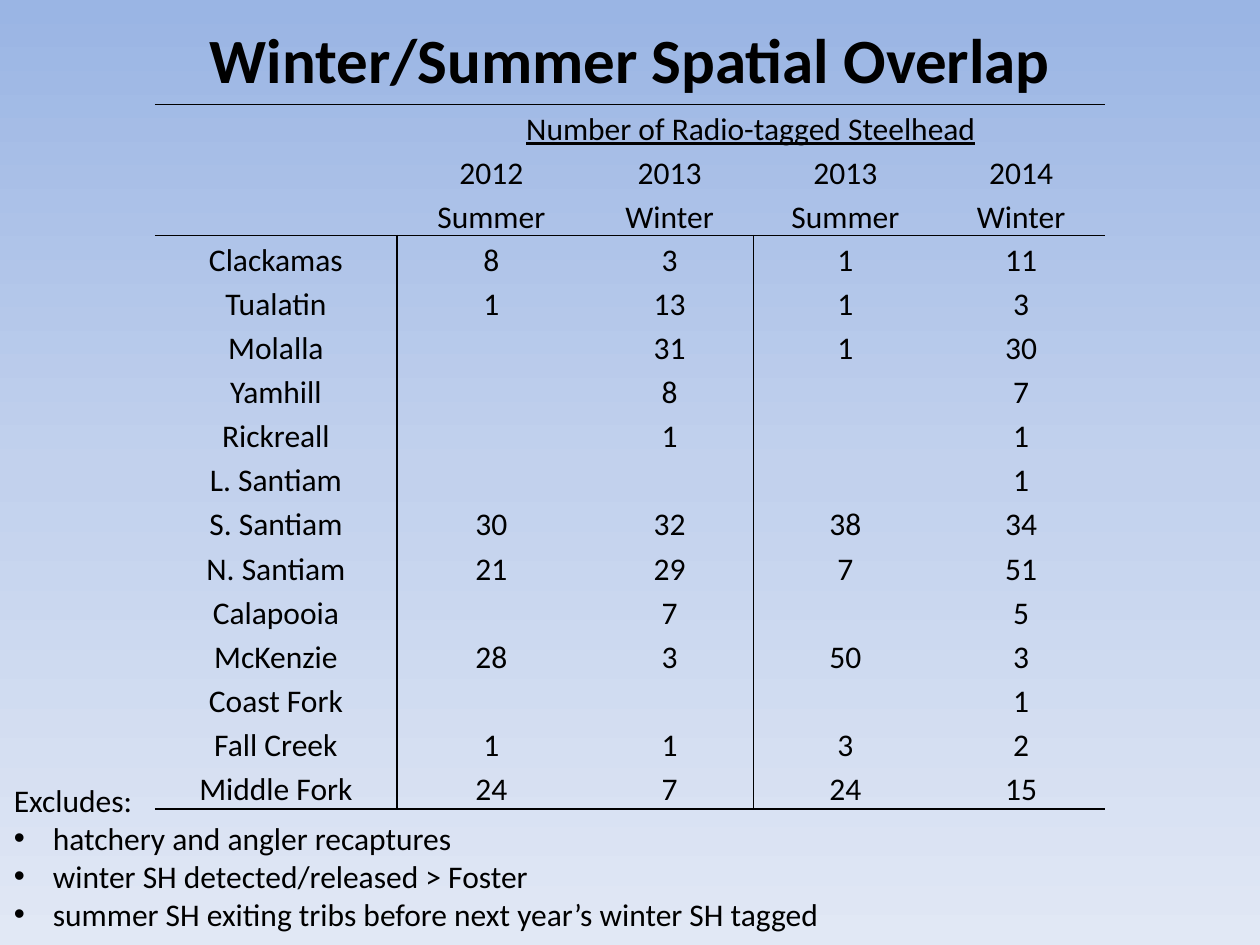
import copy
import dataclasses

import lxml.etree
import pptx
import pptx.dml.color
import pptx.enum.text
import pptx.oxml.ns
import pptx.util

Inches = pptx.util.Inches
Pt = pptx.util.Pt
qn = pptx.oxml.ns.qn
CENTER = pptx.enum.text.PP_ALIGN.CENTER
LEFT = pptx.enum.text.PP_ALIGN.LEFT
MIDDLE = pptx.enum.text.MSO_ANCHOR.MIDDLE
TOP = pptx.enum.text.MSO_ANCHOR.TOP
PLAIN_TABLE = "{2D5ABB26-0587-4C30-8999-92F81FD0307C}"


@dataclasses.dataclass(frozen=True)
class Theme:
    font: str = "Calibri"
    ink: str = "000000"
    sky: tuple = ((0, "9AB5E4"), (0.5, "C2D1ED"), (1, "E1E8F5"))
    title_size: int = 36
    text_size: int = 18
    rule_width: int = 1
    line_spacing: float = 1.15


HEADINGS = ["", "2012 Summer", "2013 Winter", "2013 Summer", "2014 Winter"]
COUNTS = [
    ("Clackamas", 8, 3, 1, 11),
    ("Tualatin", 1, 13, 1, 3),
    ("Molalla", "", 31, 1, 30),
    ("Yamhill", "", 8, "", 7),
    ("Rickreall", "", 1, "", 1),
    ("L. Santiam", "", "", "", 1),
    ("S. Santiam", 30, 32, 38, 34),
    ("N. Santiam", 21, 29, 7, 51),
    ("Calapooia", "", 7, "", 5),
    ("McKenzie", 28, 3, 50, 3),
    ("Coast Fork", "", "", "", 1),
    ("Fall Creek", 1, 1, 3, 2),
    ("Middle Fork", 24, 7, 24, 15),
]
EXCLUSIONS = [
    "hatchery and angler recaptures",
    "winter SH detected/released > Foster",
    "summer SH exiting tribs before next year’s winter SH tagged",
]


def apply(target, values):
    for name, value in values.items():
        setattr(target, name, value)


class SlideBuilder:
    def __init__(self, deck, theme):
        self.theme = theme
        self.page = deck.slides.add_slide(deck.slide_layouts[1])

    def background(self):
        fill = self.page.background.fill
        fill.gradient()
        fill.gradient_angle = 270
        stop_list = self.page.element.find(".//" + qn("a:gsLst"))
        stop_list.append(copy.deepcopy(stop_list[-1]))
        for stop, (position, color) in zip(stop_list, self.theme.sky):
            stop.set("pos", str(int(position * 100000)))
            for child in list(stop):
                stop.remove(child)
            lxml.etree.SubElement(stop, qn("a:srgbClr"), val=color)

    def place(self, box, left, top, width, height):
        apply(box, {"left": Inches(left), "top": Inches(top),
                    "width": Inches(width), "height": Inches(height)})

    def add_span(self, para, text, size=None, **values):
        span = para.add_run()
        span.text = text
        apply(span.font, {"name": self.theme.font,
                          "size": Pt(size or self.theme.text_size), **values})
        span.font.color.rgb = pptx.dml.color.RGBColor.from_string(self.theme.ink)

    def title(self, text, *bounds):
        box = self.page.shapes.title
        self.place(box, *bounds)
        box.text_frame.vertical_anchor = MIDDLE
        para = box.text_frame.paragraphs[0]
        para.alignment = CENTER
        self.add_span(para, text, self.theme.title_size, bold=True)

    def bullet_list(self, heading, items, *bounds):
        box = self.page.placeholders[1]
        self.place(box, *bounds)
        apply(box.text_frame, {
            "word_wrap": False, "vertical_anchor": TOP,
            "auto_size": pptx.enum.text.MSO_AUTO_SIZE.SHAPE_TO_FIT_TEXT})
        for index, text in enumerate([heading, *items]):
            para = box.text_frame.add_paragraph() if index else box.text_frame.paragraphs[0]
            apply(para, {"alignment": LEFT, "space_before": Pt(0)})
            indent = Inches(0.31) if index else 0
            properties = para._p.get_or_add_pPr()
            properties.set("marL", str(indent))
            properties.set("indent", str(-indent))
            if index:
                lxml.etree.SubElement(properties, qn("a:buFont"), typeface="Arial")
                lxml.etree.SubElement(properties, qn("a:buChar"), char="•")
            else:
                lxml.etree.SubElement(properties, qn("a:buNone"))
            self.add_span(para, text)

    def borders(self, cell, sides):
        properties = cell._tc.get_or_add_tcPr()
        for index, side in enumerate("LRTB"):
            line = lxml.etree.Element(qn("a:ln" + side), w=str(Pt(self.theme.rule_width)))
            if side in sides:
                fill = lxml.etree.SubElement(line, qn("a:solidFill"))
                lxml.etree.SubElement(fill, qn("a:srgbClr"), val=self.theme.ink)
            else:
                lxml.etree.SubElement(line, qn("a:noFill"))
            properties.insert(index, line)

    def table(self, rows, widths, row_height, left, top, ruled_above, ruled_right):
        frame = self.page.shapes.add_table(
            len(rows), len(widths), Inches(left), Inches(top),
            Inches(sum(widths)), Inches(row_height * len(rows)))
        grid = frame.table
        apply(grid, {"first_row": False, "horz_banding": False})
        grid._tbl.tblPr.find(qn("a:tableStyleId")).text = PLAIN_TABLE
        for column, width in zip(grid.columns, widths):
            column.width = Inches(width)
        for row in grid.rows:
            row.height = Inches(row_height)
        grid.cell(0, 1).merge(grid.cell(0, len(widths) - 1))
        for r, values in enumerate(rows):
            for c, value in enumerate(values):
                cell = grid.cell(r, c)
                apply(cell, {"margin_left": Inches(0.07), "margin_right": Inches(0.07),
                             "margin_top": 0, "margin_bottom": 0})
                cell.fill.background()
                in_body = r >= 2
                rules = {"T": r in ruled_above, "B": r + 1 in ruled_above,
                         "R": in_body and c in ruled_right,
                         "L": in_body and c - 1 in ruled_right}
                self.borders(cell, [side for side, ruled in rules.items() if ruled])
                para = cell.text_frame.paragraphs[0]
                apply(para, {"alignment": CENTER, "line_spacing": self.theme.line_spacing})
                if value != "":
                    self.add_span(para, str(value), underline=r == 0)


def main():
    deck = pptx.Presentation()
    apply(deck, {"slide_width": Inches(10), "slide_height": Inches(7.5)})
    slide = SlideBuilder(deck, Theme())
    slide.background()
    slide.title("Winter/Summer Spatial Overlap", 0.5, 0, 9, 0.92)
    rows = [["", "Number of Radio-tagged Steelhead", "", "", ""], HEADINGS, *COUNTS]
    slide.table(rows, [1.92, 1.5, 1.33, 1.46, 1.33], 0.35, 1.23, 0.83,
                ruled_above=(0, 2, len(rows)), ruled_right=(0, 2))
    slide.bullet_list("Excludes:", EXCLUSIONS, 0.01, 6.15, 6.72, 1.31)
    deck.save("out.pptx")


if __name__ == "__main__":
    main()
